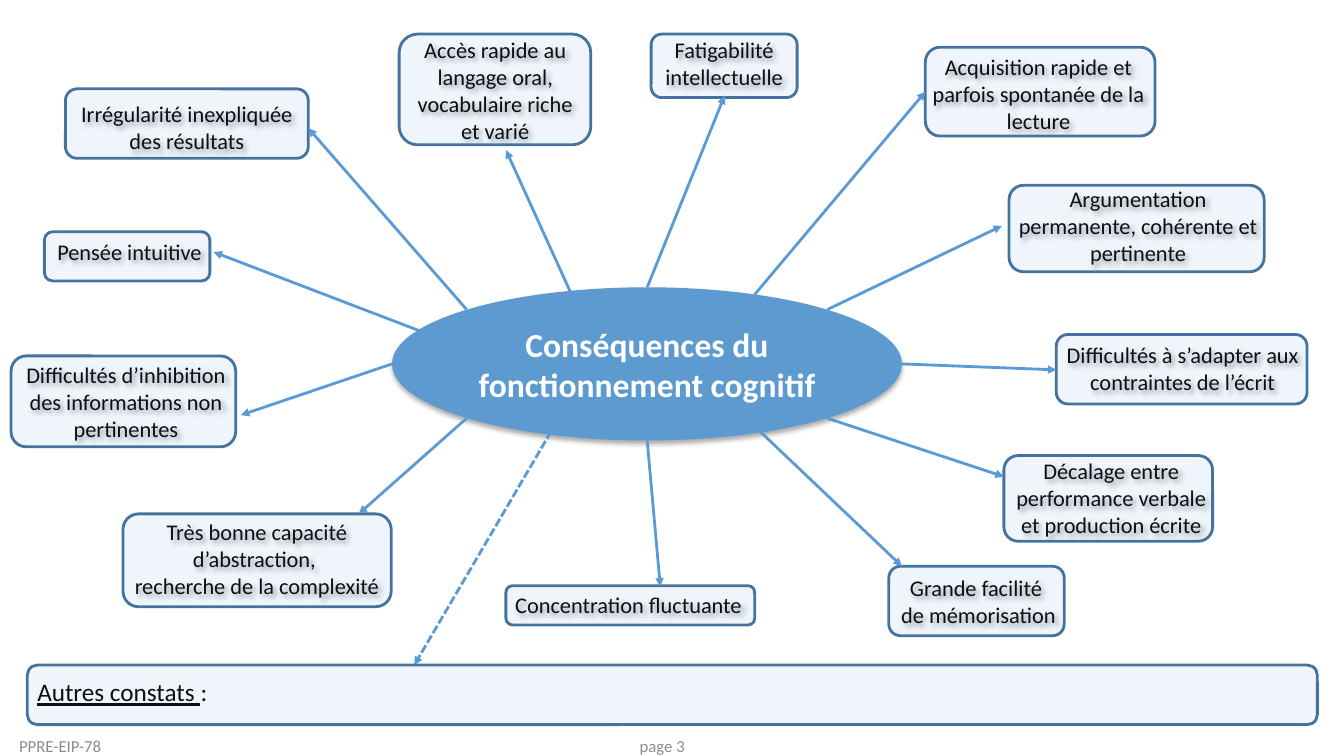
"""Build a mind map slide on the consequences of cognitive functioning."""
from lxml import etree
from pptx import Presentation
from pptx.dml.color import RGBColor
from pptx.enum.dml import MSO_LINE
from pptx.enum.shapes import MSO_CONNECTOR, MSO_SHAPE
from pptx.enum.text import MSO_ANCHOR, MSO_AUTO_SIZE, PP_ALIGN
from pptx.oxml.ns import qn
from pptx.util import Cm, Pt

LEFT, CENTER = PP_ALIGN.LEFT, PP_ALIGN.CENTER
TOP, MIDDLE = MSO_ANCHOR.TOP, MSO_ANCHOR.MIDDLE
DASHED = MSO_LINE.SQUARE_DOT
FONT = "Calibri"
TITLE_ONLY = 5

CONSEQUENCES = [
    ("Accès rapide au langage oral, vocabulaire riche et varié",
     (10.08, 0.79, 4.8, 3), (10.06, 0.86, 4.83, 2.79)),
    ("Fatigabilité intellectuelle",
     (16.51, 0.79, 3.48, 1.63), (16.41, 0.86, 3.68, 1.6)),
    ("Acquisition rapide et parfois spontanée de la lecture",
     (22.73, 1.22, 6.88, 2.31), (23.32, 1.19, 5.79, 2.24)),
    ("Argumentation permanente, cohérente et pertinente",
     (25.25, 4.55, 6.86, 2.31), (25.43, 4.67, 6.43, 2.18)),
    ("Difficultés à s’adapter aux contraintes de l’écrit",
     (26.26, 8.48, 7.09, 1.63), (26.62, 8.43, 6.32, 1.75)),
    ("Décalage entre performance verbale \net production écrite",
     (25.3, 11.4, 5.41, 2.31), (25.3, 11.48, 5.26, 2.16)),
    ("Grande facilité \nde mémorisation",
     (22.45, 14.35, 4.42, 1.63), (22.4, 14.27, 4.42, 1.75)),
    ("Concentration fluctuante",
     (12.55, 14.76, 6.58, 0.94), (12.75, 14.76, 6.27, 0.99)),
    ("Très bonne capacité d’abstraction, \nrecherche de la complexité",
     (3.07, 12.93, 6.81, 2.31), (3.1, 12.95, 6.76, 2.34)),
    ("Difficultés d’inhibition\ndes informations non pertinentes",
     (0.28, 8.97, 5.79, 3), (0.28, 8.97, 5.66, 2.29)),
    ("Pensée intuitive",
     (1.17, 5.87, 4.19, 0.94), (1.12, 5.84, 4.17, 1.24)),
    ("Irrégularité inexpliquée des résultats",
     (1.65, 2.41, 6.12, 1.63), (1.65, 2.24, 6.12, 1.75)),
]
ARROWS = [
    ((14.38, 7.37), (12.75, 3.78)),
    ((16.31, 7.24), (18.26, 2.41)),
    ((19.02, 7.42), (23.32, 2.31)),
    ((20.85, 7.8), (25.25, 5.69)),
    ((22.73, 9.17), (26.62, 9.32)),
    ((20.85, 10.54), (25.3, 12.01)),
    ((19.13, 10.85), (22.73, 14.27)),
    ((16.31, 11.1), (16.64, 14.78)),
    ((11.76, 10.54), (9.04, 12.95)),
    ((9.88, 9.17), (6.07, 10.46)),
    ((10.82, 8.43), (5.38, 6.35)),
    ((11.76, 7.8), (7.77, 3.23)),
]


def lengths(numbers):
    return [Cm(number) for number in numbers]


def color(hex_string):
    return RGBColor.from_string(hex_string)


def add_shadow(box, blur, distance, angle, opacity):
    effects = etree.SubElement(box._element.spPr, qn("a:effectLst"))
    shadow = etree.SubElement(
        effects, qn("a:outerShdw"), blurRad=str(Pt(blur)), dist=str(Pt(distance)),
        dir=str(angle * 60000), algn="tl", rotWithShape="0")
    black = etree.SubElement(shadow, qn("a:srgbClr"), val="000000")
    etree.SubElement(black, qn("a:alpha"), val=str(opacity * 1000))


def add_span(para, text, size=16, fill="000000", bold=False, underline=False):
    span = para.add_run()
    span.text = text
    span.font.name = FONT
    span.font.size = Pt(size)
    span.font.bold = bold
    span.font.underline = underline
    span.font.color.rgb = color(fill)


def write(box, text, align=CENTER, anchor=TOP, **style):
    frame = box.text_frame
    frame.word_wrap = True
    frame.auto_size = MSO_AUTO_SIZE.NONE
    frame.vertical_anchor = anchor
    for number, line in enumerate(text.split("\n")):
        para = frame.add_paragraph() if number else frame.paragraphs[0]
        para.alignment = align
        add_span(para, line, **style)
    return frame


def add_text(page, place, text, **style):
    box = page.shapes.add_textbox(*lengths(place))
    write(box, text, **style)
    return box


def add_frame(page, place):
    box = page.shapes.add_shape(MSO_SHAPE.ROUNDED_RECTANGLE, *lengths(place))
    box.shadow.inherit = False
    box.fill.solid()
    box.fill.fore_color.rgb = color("6AA4D9")
    tint = box._element.spPr.find(qn("a:solidFill"))[0]
    etree.SubElement(tint, qn("a:alpha"), val="10000")
    box.line.color.rgb = color("43739E")
    box.line.width = Pt(2)


def add_arrow(page, start, end, dash=None):
    arrow = page.shapes.add_connector(MSO_CONNECTOR.STRAIGHT, *lengths(start + end))
    arrow.line.color.rgb = color("5B9BD5")
    arrow.line.width = Pt(2)
    if dash:
        arrow.line.dash_style = dash
    etree.SubElement(arrow.line._get_or_add_ln(), qn("a:tailEnd"), type="triangle")
    etree.SubElement(arrow._element.spPr, qn("a:effectLst"))


def add_center(page):
    ellipse = page.shapes.add_shape(
        MSO_SHAPE.OVAL, *lengths((9.88, 7.24, 12.85, 3.86)))
    ellipse.fill.solid()
    ellipse.fill.fore_color.rgb = color("5D9AD0")
    ellipse.line.fill.background()
    add_shadow(ellipse, blur=3.5, distance=2.2, angle=90, opacity=32)
    title = page.shapes.title
    title.left, title.top, title.width, title.height = lengths((11.76, 7.8, 9.09, 2.74))
    write(title, "Conséquences du fonctionnement cognitif",
          anchor=MIDDLE, size=24, fill="FFFFFF", bold=True)
    title._element.addprevious(ellipse._element)


def add_remarks(page):
    box = add_text(page, (0.69, 16.92, 19.69, 1.8), "Autres constats ",
                   align=LEFT, size=18, underline=True)
    add_span(box.text_frame.paragraphs[0], ":", size=18)
    add_frame(page, (0.69, 16.76, 32.51, 1.5))


def add_footer(page):
    for left, text in ((0.23, "PPRE-EIP-78"), (15.87, "page 3")):
        box = add_text(page, (left, 18.55, 4, 0.5), text,
                       align=LEFT, anchor=MIDDLE, size=12, fill="8C8C8C")
        box.text_frame.margin_top = box.text_frame.margin_bottom = 0


def main():
    deck = Presentation()
    deck.slide_width, deck.slide_height = Cm(33.87), Cm(19.05)
    page = deck.slides.add_slide(deck.slide_layouts[TITLE_ONLY])
    add_center(page)
    for text, text_place, frame_place in CONSEQUENCES:
        box = add_text(page, text_place, text)
        add_shadow(box, blur=4, distance=3, angle=45, opacity=40)
        add_frame(page, frame_place)
    for start, end in ARROWS:
        add_arrow(page, start, end)
    add_arrow(page, (13.89, 10.87), (10.44, 16.76), dash=DASHED)
    add_remarks(page)
    add_footer(page)
    deck.save("out.pptx")


if __name__ == "__main__":
    main()
